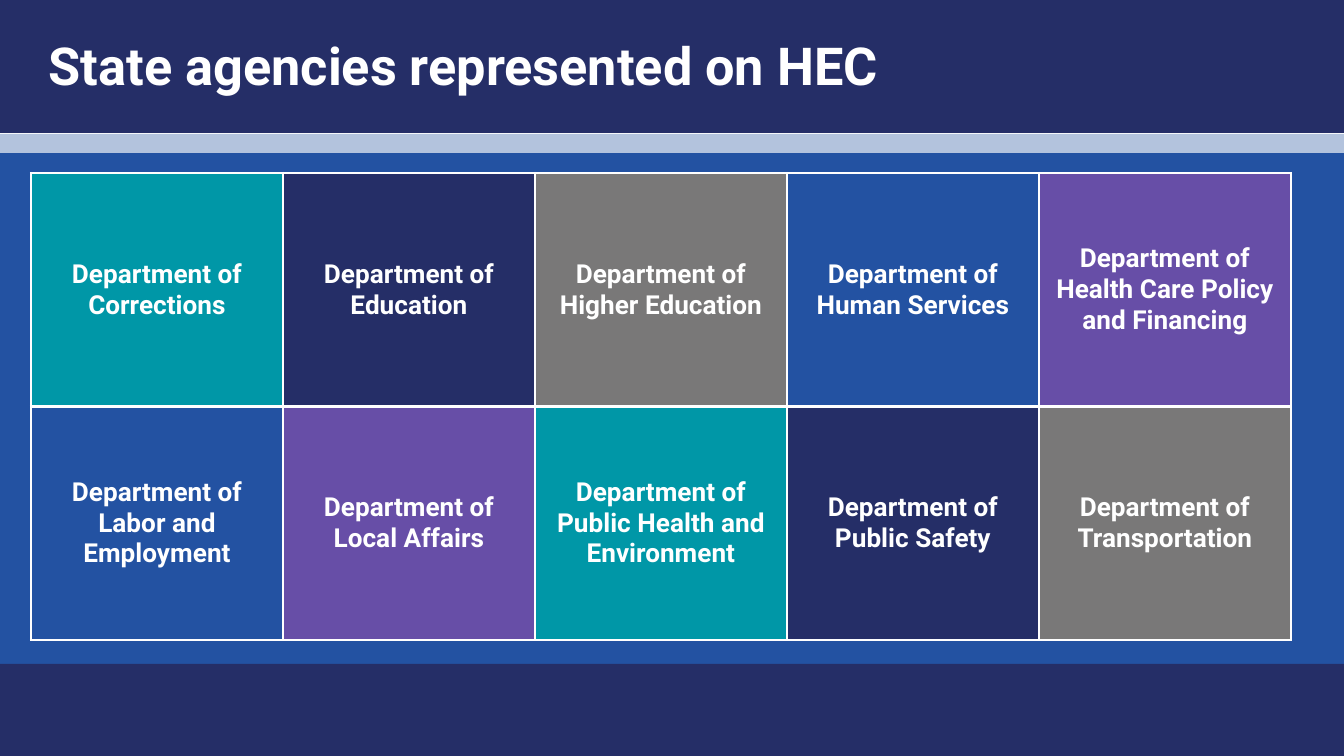
from lxml import etree
from pptx import Presentation
from pptx.dml.color import RGBColor
from pptx.enum.shapes import MSO_SHAPE
from pptx.enum.text import MSO_ANCHOR, PP_ALIGN
from pptx.oxml.ns import qn
from pptx.util import Pt

RECTANGLE = MSO_SHAPE.RECTANGLE
TOP, MIDDLE = MSO_ANCHOR.TOP, MSO_ANCHOR.MIDDLE
LEFT, CENTER = PP_ALIGN.LEFT, PP_ALIGN.CENTER

SLIDE_WIDTH, SLIDE_HEIGHT = 1344, 756
EMU_PER_PX = 9144000 / SLIDE_WIDTH
INSET = 13
FONT = "Roboto"
COLORS = {
    "white": "FFFFFF",
    "navy": "252E67",
    "blue": "2352A2",
    "pale": "B3C3DD",
    "teal": "0097A7",
    "gray": "797878",
    "purple": "674EA7",
}
AGENCIES = [
    [("Corrections", "teal"), ("Education", "navy"), ("Higher Education", "gray"),
     ("Human Services", "blue"), ("Health Care Policy and Financing", "purple")],
    [("Labor and Employment", "blue"), ("Local Affairs", "purple"),
     ("Public Health and Environment", "teal"), ("Public Safety", "navy"),
     ("Transportation", "gray")],
]


def px(length):
    return round(length * EMU_PER_PX)


def fill_solid(target, color):
    target.fill.solid()
    target.fill.fore_color.rgb = RGBColor.from_string(COLORS[color])


def write_text(text_frame, text, size, alignment):
    text_frame.text = text
    paragraph = text_frame.paragraphs[0]
    paragraph.alignment = alignment
    font = paragraph.runs[0].font
    font.name, font.size, font.bold = FONT, Pt(size), True
    font.color.rgb = RGBColor.from_string(COLORS["white"])


def set_insets(target):
    """Give a cell or text frame the same margin on every side."""
    target.margin_left = target.margin_right = px(INSET)
    target.margin_top = target.margin_bottom = px(INSET)


def add_cell_borders(cell, color, width):
    properties = cell._tc.get_or_add_tcPr()
    for index, side in enumerate(("a:lnL", "a:lnR", "a:lnT", "a:lnB")):
        line = etree.Element(qn(side), w=str(Pt(width)))
        fill = etree.SubElement(line, qn("a:solidFill"))
        etree.SubElement(fill, qn("a:srgbClr"), val=COLORS[color])
        properties.insert(index, line)


def add_band(slide, top, height, color):
    """Add a full-width background band."""
    band = slide.shapes.add_shape(RECTANGLE, 0, px(top), px(SLIDE_WIDTH), px(height))
    band.shadow.inherit = False
    fill_solid(band, color)
    band.line.fill.background()


def add_background(slide):
    add_band(slide, 141, 535, "blue")
    add_band(slide, 664, 92, "navy")
    add_band(slide, -1, 134, "navy")
    add_band(slide, 134, 19, "pale")


def add_title(slide, left, top, width, height):
    title = slide.shapes.add_textbox(px(left), px(top), px(width), px(height))
    text_frame = title.text_frame
    text_frame.word_wrap = True
    text_frame.vertical_anchor = TOP
    set_insets(text_frame)
    write_text(text_frame, "State agencies represented on HEC", 28, LEFT)


def add_agency_table(slide, left, top, width, height):
    row_count, column_count = len(AGENCIES), len(AGENCIES[0])
    table = slide.shapes.add_table(
        row_count, column_count, px(left), px(top), px(width), px(height)).table
    table.first_row = table.horz_banding = False
    for column in table.columns:
        column.width = px(width / column_count)
    for row, agencies in zip(table.rows, AGENCIES):
        row.height = px(height / row_count)
        for cell, (agency, color) in zip(row.cells, agencies):
            fill_solid(cell, color)
            add_cell_borders(cell, "white", 1.5)
            set_insets(cell)
            cell.vertical_anchor = MIDDLE
            write_text(cell.text_frame, f"Department of {agency}", 14, CENTER)


def main():
    presentation = Presentation()
    presentation.slide_width = px(SLIDE_WIDTH)
    presentation.slide_height = px(SLIDE_HEIGHT)
    slide = presentation.slides.add_slide(presentation.slide_layouts[6])
    add_background(slide)
    add_title(slide, 36, 20, 1253, 85)
    add_agency_table(slide, 31, 173, 1260, 467)
    presentation.save("out.pptx")


if __name__ == "__main__":
    main()
